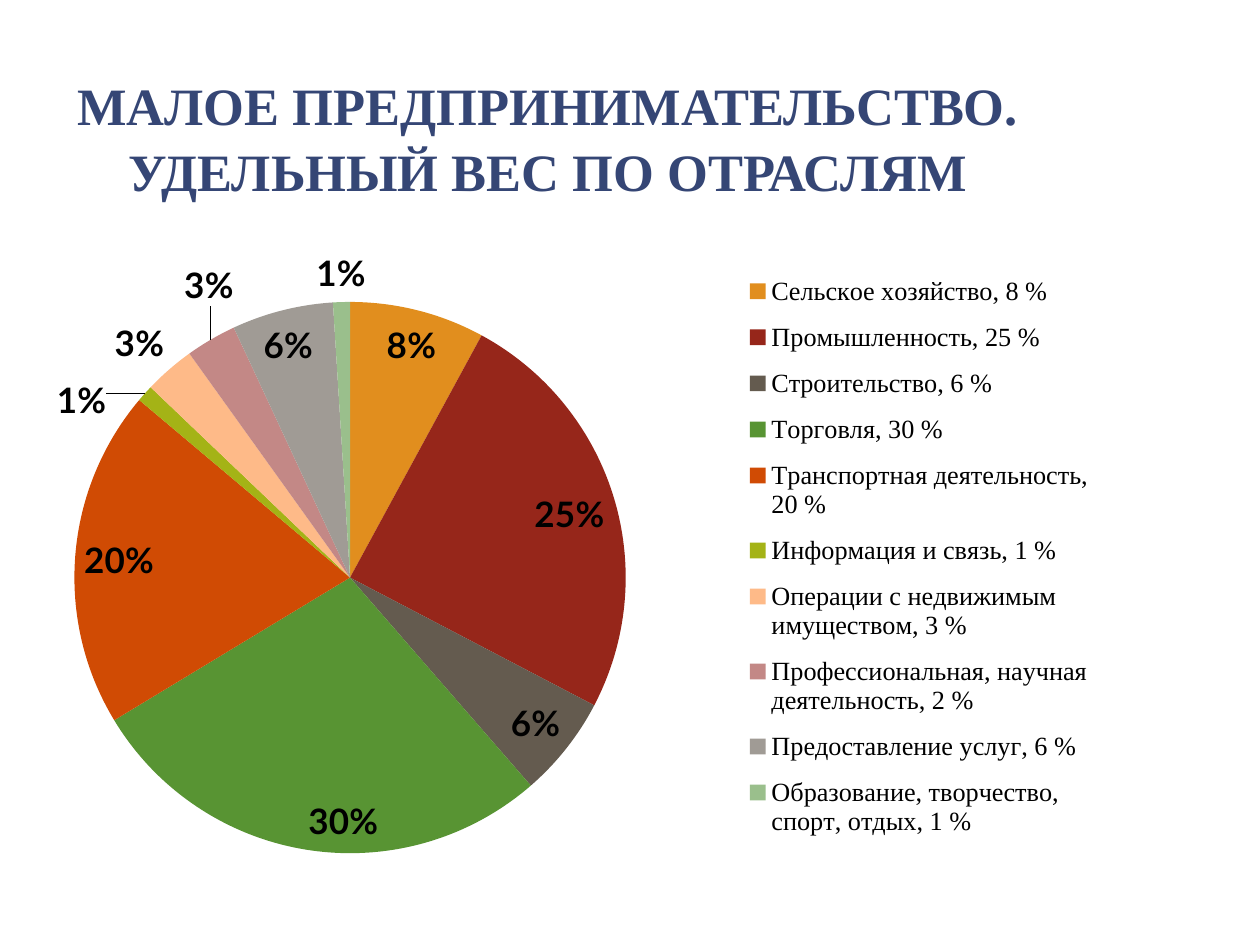
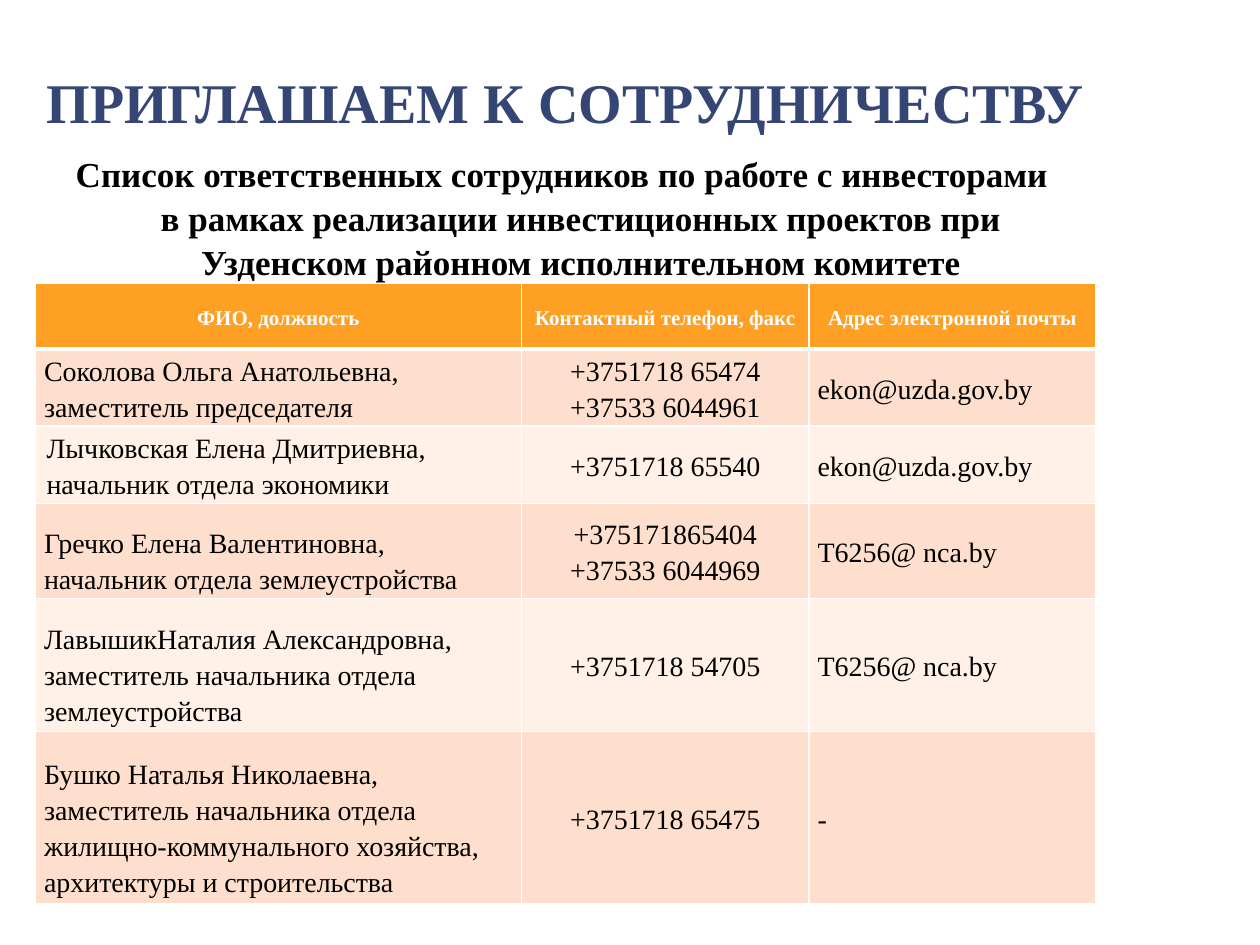
from dataclasses import dataclass

from lxml.etree import SubElement
from pptx import Presentation
from pptx.chart.data import CategoryChartData
from pptx.dml.color import RGBColor
from pptx.enum.chart import XL_CHART_TYPE, XL_LABEL_POSITION, XL_LEGEND_POSITION
from pptx.enum.text import MSO_ANCHOR, MSO_AUTO_SIZE, PP_ALIGN
from pptx.oxml import parse_xml
from pptx.oxml.ns import nsdecls, qn
from pptx.util import Inches, Pt


@dataclass(frozen=True)
class Theme:
    serif: str = "Times New Roman"
    sans: str = "Lato"
    title: str = "354675"
    text: str = "000000"
    white: str = "FFFFFF"
    header_fill: str = "FDA023"
    row_fills: tuple[str, str] = ("FEDFCD", "FFF0E8")
    subtitle_size: int = 20
    label_size: int = 20
    legend_size: int = 15
    header_size: int = 12
    cell_size: int = 16
    text_spacing: float = 1.04
    cell_spacing: float = 1.15


@dataclass(frozen=True)
class Box:
    left: float
    top: float
    width: float
    height: float

    def lengths(self) -> tuple:
        return tuple(Inches(v) for v in (self.left, self.top, self.width, self.height))


@dataclass(frozen=True)
class Industry:
    name: str
    value: int
    color: str


@dataclass(frozen=True)
class Employee:
    description: tuple[str, ...]
    phones: tuple[str, ...]
    email: str
    row_height: float
    left_inset: float = 0.07
    top_inset: float = 0


THEME = Theme()

INDUSTRIES = (
    Industry("Сельское хозяйство, 8 %", 8, "E18E1E"),
    Industry("Промышленность, 25 %", 25, "96261A"),
    Industry("Строительство, 6 %", 6, "645B4F"),
    Industry("Торговля, 30 %", 28, "589433"),
    Industry("Транспортная деятельность, 20 %", 20, "D04B04"),
    Industry("Информация и связь, 1 %", 1, "A4B316"),
    Industry("Операции с недвижимым имуществом, 3 %", 3, "FEBA88"),
    Industry("Профессиональная, научная деятельность, 2 %", 3, "C38886"),
    Industry("Предоставление услуг, 6 %", 6, "A09B95"),
    Industry("Образование, творчество, спорт, отдых, 1 %", 1, "9ABF8C"),
)
TRADE_INDEX = 3

HEADERS = ("ФИО, должность", "Контактный телефон, факс", "Адрес электронной почты")
HEADER_HEIGHT = 0.52
COLUMN_WIDTHS = (3.86, 2.28, 2.28)
EMPLOYEES = (
    Employee(("Соколова Ольга Анатольевна,", "заместитель председателя"),
             ("+3751718 65474", "+37533 6044961"), "ekon@uzda.gov.by", 0.57),
    Employee(("Лычковская Елена Дмитриевна,", "начальник отдела экономики"),
             ("+3751718 65540",), "ekon@uzda.gov.by", 0.57, left_inset=0.09),
    Employee(("Гречко Елена Валентиновна,", "начальник отдела землеустройства"),
             ("+375171865404", "+37533 6044969"), "T6256@ nca.by", 0.72, top_inset=0.14),
    Employee(("ЛавышикНаталия Александровна, заместитель начальника отдела землеустройства",),
             ("+3751718 54705",), "T6256@ nca.by", 1.01, top_inset=0.14),
    Employee(("Бушко Наталья Николаевна,",
              "заместитель начальника отдела жилищно-коммунального хозяйства, "
              "архитектуры и строительства"),
             ("+3751718 65475",), "-", 1.28, top_inset=0.14),
)


def style_font(font, size: int, color: str, bold: bool = False, name: str = THEME.serif) -> None:
    font.name, font.size, font.bold = name, Pt(size), bold
    font.color.rgb = RGBColor.from_string(color)


def write_lines(text_frame, lines: tuple[str, ...], size: int, color: str, bold: bool,
                alignment: PP_ALIGN, spacing: float) -> None:
    for index, line in enumerate(lines):
        paragraph = text_frame.add_paragraph() if index else text_frame.paragraphs[0]
        paragraph.alignment = alignment
        paragraph.line_spacing = spacing
        run = paragraph.add_run()
        run.text = line
        style_font(run.font, size, color, bold)


def add_titled_slide(presentation, title: str, box: Box, size: int):
    slide = presentation.slides.add_slide(presentation.slide_layouts[5])
    shape = slide.shapes.title
    shape.left, shape.top, shape.width, shape.height = box.lengths()
    frame = shape.text_frame
    frame.word_wrap, frame.auto_size = True, MSO_AUTO_SIZE.NONE
    frame.vertical_anchor = MSO_ANCHOR.BOTTOM
    frame.margin_left = frame.margin_right = Inches(0.05)
    frame.margin_top = frame.margin_bottom = 0
    write_lines(frame, (title,), size, THEME.title, True, PP_ALIGN.CENTER, THEME.text_spacing)
    return slide


def manual_layout(box: Box, inner: bool = False):
    """Return a chart layout whose box is given in fractions of the chart."""
    layout = parse_xml(f"<c:layout {nsdecls('c')}><c:manualLayout/></c:layout>")
    settings = [("layoutTarget", "inner")] if inner else []
    settings += [("xMode", "edge"), ("yMode", "edge"), ("x", box.left), ("y", box.top),
                 ("w", box.width), ("h", box.height)]
    for tag, value in settings:
        SubElement(layout[0], qn(f"c:{tag}")).set("val", str(value))
    return layout


def add_industry_pie(slide, box: Box) -> None:
    data = CategoryChartData()
    data.categories = [industry.name for industry in INDUSTRIES]
    data.add_series("Series 1", [industry.value for industry in INDUSTRIES])
    chart = slide.shapes.add_chart(XL_CHART_TYPE.PIE, *box.lengths(), data).chart
    chart.has_title = False
    style_font(chart.font, 18, THEME.text, name=THEME.sans)

    plot = chart.plots[0]
    plot.vary_by_categories = True
    series = plot.series[0]
    for index, industry in enumerate(INDUSTRIES):
        fill = series.points[index].format.fill
        fill.solid()
        fill.fore_color.rgb = RGBColor.from_string(industry.color)

    labels = series.data_labels
    labels.show_percentage, labels.show_value = True, False
    labels.number_format, labels.number_format_is_linked = "0%", False
    labels.position = XL_LABEL_POSITION.BEST_FIT
    style_font(labels.font, THEME.label_size, THEME.text, True, THEME.sans)
    trade_label = series.points[TRADE_INDEX].data_label
    run = trade_label.text_frame.paragraphs[0].add_run()
    run.text = "30%"
    style_font(run.font, THEME.label_size, THEME.text, True, THEME.sans)
    trade_label.position = XL_LABEL_POSITION.INSIDE_END

    chart.has_legend = True
    legend = chart.legend
    legend.position, legend.include_in_layout = XL_LEGEND_POSITION.RIGHT, False
    style_font(legend.font, THEME.legend_size, THEME.text)

    chart_space = chart.element
    plot_area = chart_space.find(f".//{qn('c:plotArea')}")
    for layout in plot_area.findall(qn("c:layout")):
        plot_area.remove(layout)
    plot_area.insert(0, manual_layout(Box(0.03, 0.11, 0.46, 0.78), inner=True))
    legend_element = chart_space.find(f".//{qn('c:legend')}")
    for layout in legend_element.findall(qn("c:layout")):
        legend_element.remove(layout)
    legend_element.find(qn("c:legendPos")).addnext(manual_layout(Box(0.58, 0.05, 0.3, 0.84)))


def add_subtitle(slide, text: str, box: Box) -> None:
    frame = slide.shapes.add_textbox(*box.lengths()).text_frame
    frame.word_wrap = True
    write_lines(frame, (text,), THEME.subtitle_size, THEME.text, True,
                PP_ALIGN.CENTER, THEME.text_spacing)
    properties = frame.paragraphs[0]._p.get_or_add_pPr()
    properties.set("marL", str(Inches(0.3)))
    properties.set("indent", str(Inches(-0.3)))


def set_borders(cell, bottom_width: int) -> None:
    properties = cell._tc.get_or_add_tcPr()
    widths = {"lnL": 1, "lnR": 1, "lnT": 1, "lnB": bottom_width}
    for position, (tag, width) in enumerate(widths.items()):
        properties.insert(position, parse_xml(
            f'<a:{tag} {nsdecls("a")} w="{Pt(width)}"><a:solidFill>'
            f'<a:srgbClr val="{THEME.white}"/></a:solidFill></a:{tag}>'))


def fill_cell(cell, lines: tuple[str, ...], fill: str, centered: bool, header: bool = False,
              left_inset: float = 0.07, top_inset: float = 0) -> None:
    cell.vertical_anchor = MSO_ANCHOR.MIDDLE
    cell.margin_left, cell.margin_right = Inches(left_inset), Inches(0.07)
    cell.margin_top, cell.margin_bottom = Inches(top_inset), 0
    cell.fill.solid()
    cell.fill.fore_color.rgb = RGBColor.from_string(fill)
    set_borders(cell, 3 if header else 1)
    write_lines(cell.text_frame, lines,
                THEME.header_size if header else THEME.cell_size,
                THEME.white if header else THEME.text, header,
                PP_ALIGN.CENTER if centered else PP_ALIGN.LEFT, THEME.cell_spacing)


def add_contact_table(slide, left: float, top: float) -> None:
    heights = (HEADER_HEIGHT, *(employee.row_height for employee in EMPLOYEES))
    box = Box(left, top, sum(COLUMN_WIDTHS), sum(heights))
    table = slide.shapes.add_table(len(heights), len(COLUMN_WIDTHS), *box.lengths()).table
    for column, width in zip(table.columns, COLUMN_WIDTHS):
        column.width = Inches(width)
    for row, height in zip(table.rows, heights):
        row.height = Inches(height)
    for column, header in enumerate(HEADERS):
        fill_cell(table.cell(0, column), (header,), THEME.header_fill, True, header=True)
    for row, employee in enumerate(EMPLOYEES, start=1):
        fill = THEME.row_fills[(row - 1) % 2]
        fill_cell(table.cell(row, 0), employee.description, fill, False,
                  left_inset=employee.left_inset, top_inset=employee.top_inset)
        fill_cell(table.cell(row, 1), employee.phones, fill, True)
        fill_cell(table.cell(row, 2), (employee.email,), fill, False)


def main() -> None:
    presentation = Presentation()
    presentation.slide_width, presentation.slide_height = Inches(10), Inches(7.5)

    industries = add_titled_slide(
        presentation, "МАЛОЕ ПРЕДПРИНИМАТЕЛЬСТВО. УДЕЛЬНЫЙ ВЕС ПО ОТРАСЛЯМ",
        Box(0.28, 0.35, 8.14, 1.25), 30)
    add_industry_pie(industries, Box(0.28, 1.78, 9.61, 5.61))

    contacts = add_titled_slide(
        presentation, "ПРИГЛАШАЕМ К СОТРУДНИЧЕСТВУ", Box(0.12, 0.36, 8.74, 0.71), 32)
    add_subtitle(
        contacts,
        "Список ответственных сотрудников по работе с инвесторами в рамках реализации "
        "инвестиционных проектов при Узденском районном исполнительном комитете",
        Box(0.5, 1.15, 7.92, 1.1))
    add_contact_table(contacts, 0.28, 2.25)

    presentation.save("out.pptx")


if __name__ == "__main__":
    main()
